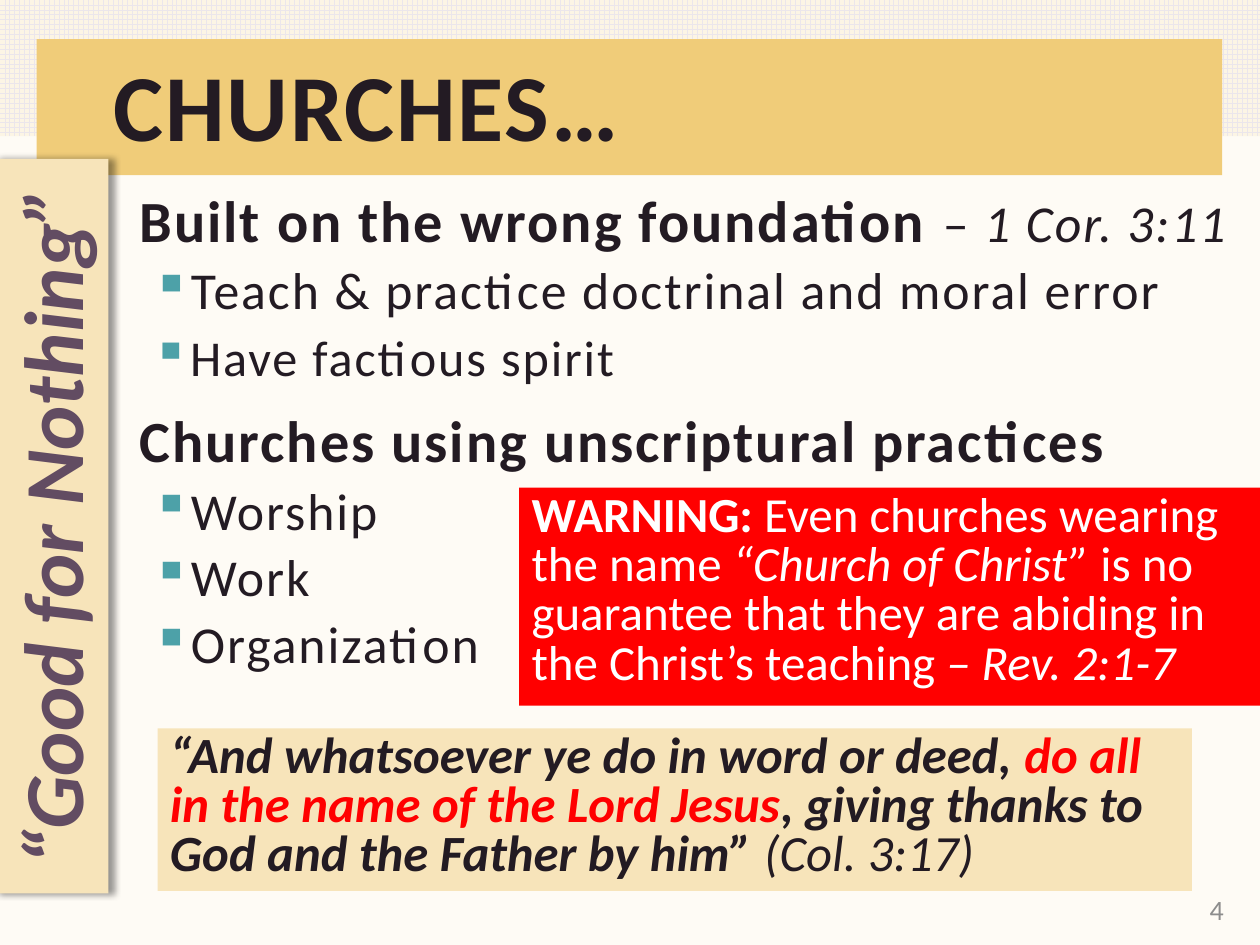
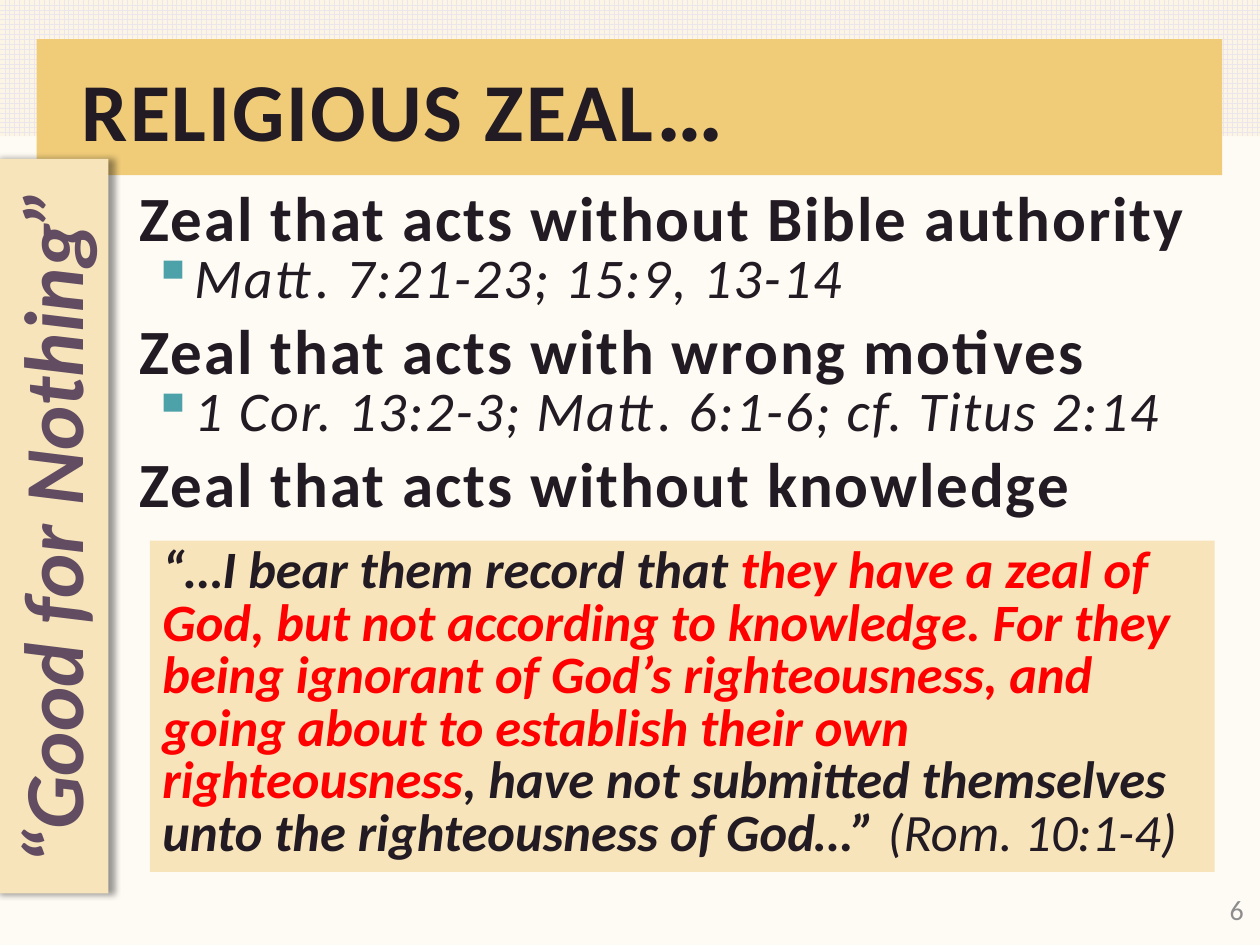
from lxml.etree import SubElement
from pptx import Presentation
from pptx.dml.color import RGBColor
from pptx.enum.dml import MSO_PATTERN
from pptx.enum.shapes import MSO_SHAPE
from pptx.enum.text import MSO_ANCHOR as ANCHOR, PP_ALIGN as ALIGN
from pptx.oxml.ns import qn
from pptx.util import Inches, Pt

INK = RGBColor(0x23, 0x1B, 0x23)
PAPER = RGBColor(0xFE, 0xFB, 0xF5)
CREAM = RGBColor(0xFC, 0xF5, 0xE5)
GRID = RGBColor(0xEB, 0xE6, 0xEB)
GOLD = RGBColor(0xF0, 0xCC, 0x79)
SAND = RGBColor(0xF7, 0xE4, 0xBA)
PLUM = RGBColor(0x62, 0x4C, 0x62)
TEAL = RGBColor(0x4D, 0xA1, 0xA8)
RED = RGBColor(0xFF, 0x00, 0x00)
WHITE = RGBColor(0xFF, 0xFF, 0xFF)
GREY = RGBColor(0x8D, 0x8D, 0x8D)
FONT = "Calibri"
TRACKING = 110


def add_run(p, text, size, style="", color=INK, tracking=0):
    """Append a run; style holds 'b' for bold and 'i' for italic."""
    r = p.add_run()
    r.text = text
    r.font.name = FONT
    r.font.size = Pt(size)
    r.font.bold = "b" in style
    r.font.italic = "i" in style
    r.font.color.rgb = color
    if tracking:
        r.font._element.set("spc", str(tracking))


def add_band(s, x, y, w, h):
    """Add a plain rectangle without line or shadow."""
    sp = s.shapes.add_shape(MSO_SHAPE.RECTANGLE, Inches(x), Inches(y), Inches(w), Inches(h))
    sp.line.fill.background()
    sp.shadow.inherit = False
    return sp


def add_box(s, x, y, w, h, fill=None, anchor=ANCHOR.TOP):
    """Add a wrapping text box, filled if a colour is given."""
    sp = s.shapes.add_textbox(Inches(x), Inches(y), Inches(w), Inches(h))
    sp.text_frame.word_wrap = True
    sp.text_frame.vertical_anchor = anchor
    if fill is not None:
        sp.fill.solid()
        sp.fill.fore_color.rgb = fill
    return sp


def add_bullet(p):
    """Give a paragraph a hanging teal square bullet."""
    pPr = p._p.get_or_add_pPr()
    pPr.set("marL", str(Inches(0.4)))
    pPr.set("indent", str(Inches(-0.3)))
    color = SubElement(pPr, qn("a:buClr"))
    SubElement(color, qn("a:srgbClr"), val=str(TEAL))
    SubElement(pPr, qn("a:buChar"), char="▪")


def add_side_shadow(sp):
    """Cast a soft shadow to the right of a shape."""
    effects = SubElement(sp._element.spPr, qn("a:effectLst"))
    shadow = SubElement(effects, qn("a:outerShdw"), blurRad=str(Pt(4)), dist=str(Pt(3)),
                        dir="0", algn="l", rotWithShape="0")
    color = SubElement(shadow, qn("a:srgbClr"), val="000000")
    SubElement(color, qn("a:alpha"), val="40000")


def add_title(s, indent, *runs):
    """Add the title over the gold band."""
    tf = add_box(s, 0.24, 0.56, 9.23, 0.64, anchor=ANCHOR.MIDDLE).text_frame
    tf.margin_left = Inches(indent)
    p = tf.paragraphs[0]
    p.line_spacing = 0.9
    for text, size in runs:
        add_run(p, text, size, "b", tracking=TRACKING)


def add_body(s, height, items):
    """Add headings and bullets; an item is (is bullet, space before, runs)."""
    tf = add_box(s, 1.01, 1.52, 8.99, height).text_frame
    for i, (is_bullet, before, runs) in enumerate(items):
        p = tf.add_paragraph() if i else tf.paragraphs[0]
        p.line_spacing = Pt(32)
        if i:
            p.space_before = Pt(before)
        if is_bullet:
            add_bullet(p)
        for run in runs:
            add_run(p, *run, tracking=TRACKING)


def add_callout(s, x, y, w, h, fill, leading, size, runs):
    """Add a filled passage; a run is (text, style, colour)."""
    p = add_box(s, x, y, w, h, fill).text_frame.paragraphs[0]
    p.line_spacing = Pt(leading)
    for text, style, color in runs:
        add_run(p, text, size, style, color)


def add_sidebar(s):
    """Add the upright series name on the left edge."""
    sp = add_box(s, -2.51, 3.72, 5.83, 0.91, SAND)
    sp.rotation = 270
    add_side_shadow(sp)
    p = sp.text_frame.paragraphs[0]
    p.alignment = ALIGN.CENTER
    add_run(p, "“Good for Nothing”", 48, "bi", PLUM)


def add_number(s, x, number):
    """Add the slide number at the bottom right."""
    p = add_box(s, x, 7.09, 2.25, 0.25, anchor=ANCHOR.MIDDLE).text_frame.paragraphs[0]
    p.alignment = ALIGN.RIGHT
    add_run(p, number, 16, color=GREY)


def add_base(prs):
    """Add a slide with the shared background and bands."""
    s = prs.slides.add_slide(prs.slide_layouts[6])
    s.background.fill.solid()
    s.background.fill.fore_color.rgb = PAPER
    grid = add_band(s, 0, 0, 10, 1.08)
    grid.fill.patterned()
    grid.fill.pattern = MSO_PATTERN.LARGE_GRID
    grid.fill.fore_color.rgb = GRID
    grid.fill.back_color.rgb = CREAM
    band = add_band(s, 0.29, 0.31, 9.41, 1.08)
    band.fill.solid()
    band.fill.fore_color.rgb = GOLD
    return s


def add_churches(prs):
    """Build the slide on churches."""
    s = add_base(prs)
    add_title(s, 0.66, ("CHURCHES…", 54))
    add_body(s, 3.96, [
        (False, 0, [("Built on the wrong foundation ", 33.3, "b"),
                    ("– ", 29.6), ("1 Cor. 3:11", 29.6, "i")]),
        (True, 6, [("Teach & practice doctrinal and moral error", 29.6)]),
        (True, 6, [("Have factious spirit", 28.7)]),
        (False, 18, [("Churches using unscriptural practices", 33.3, "b")]),
        *[(True, 6, [(word, 29.6)]) for word in ("Worship", "Work", "Organization")],
    ])
    add_sidebar(s)
    add_number(s, 7.56, "4")
    add_callout(s, 1.25, 5.78, 8.21, 1.29, SAND, 28, 29, [
        ("“And whatsoever ye do in word or deed, ", "bi", INK),
        ("do all in the name of the Lord Jesus", "bi", RED),
        (", giving thanks to God and the Father by him” ", "bi", INK),
        ("(Col. 3:17)", "i", INK),
    ])
    add_callout(s, 4.12, 3.87, 5.88, 1.73, RED, 28, 28, [
        ("WARNING:", "b", WHITE),
        (" Even churches wearing the name ", "", WHITE),
        ("“Church of Christ” ", "i", WHITE),
        ("is no guarantee that they are abiding in the Christ’s teaching ", "", WHITE),
        ("– Rev. 2:1-7", "i", WHITE),
    ])


def add_zeal(prs):
    """Build the slide on religious zeal."""
    s = add_base(prs)
    add_title(s, 0.41, ("RELIGIOUS ZEAL", 47), ("…", 54))
    add_body(s, 2.7, [
        (False, 0, [("Zeal that acts without Bible authority", 36, "b")]),
        (True, 0, [("Matt. 7:21-23; 15:9, 13-14", 32, "i")]),
        (False, 12, [("Zeal that acts with wrong motives", 36, "b")]),
        (True, 0, [("1 Cor. 13:2-3; Matt. 6:1-6; cf. Titus 2:14", 32, "i")]),
        (False, 12, [("Zeal that acts without knowledge", 36, "b")]),
    ])
    add_sidebar(s)
    add_callout(s, 1.19, 4.29, 8.45, 2.63, SAND, 30, 30, [
        ("“…I bear them record that ", "bi", INK),
        ("they have a zeal of God, but not according to knowledge. For they being ignorant of "
         "God’s righteousness, and going about to establish their own righteousness", "bi", RED),
        (", have not submitted themselves unto the righteousness of God…” ", "bi", INK),
        ("(Rom. 10:1-4)", "i", INK),
    ])
    add_number(s, 7.72, "6")


def main():
    """Build and save the presentation."""
    prs = Presentation()
    prs.slide_width, prs.slide_height = Inches(10), Inches(7.5)
    add_churches(prs)
    add_zeal(prs)
    prs.save("out.pptx")


if __name__ == "__main__":
    main()
